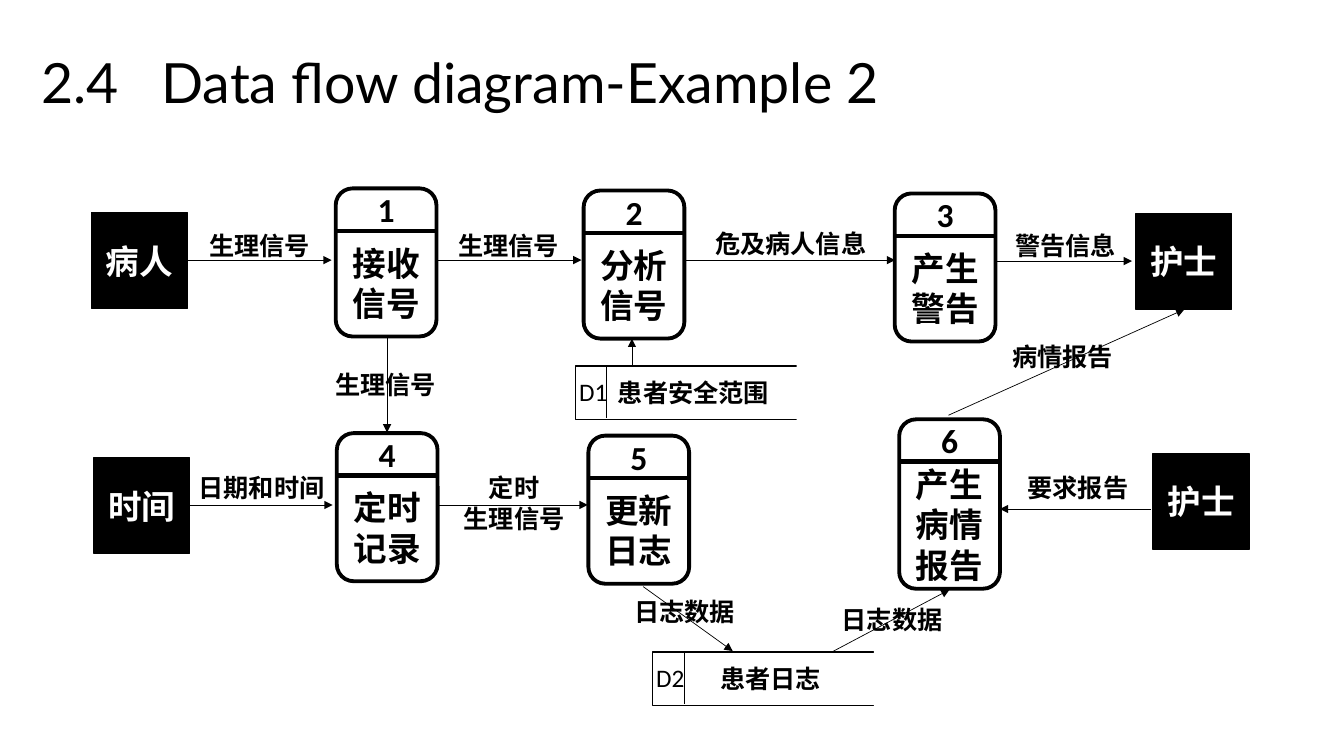
import pptx
import pptx.util
from pptx.dml.color import RGBColor
from pptx.enum.shapes import MSO_CONNECTOR, MSO_SHAPE
from pptx.enum.text import MSO_ANCHOR, PP_ALIGN
from lxml import etree

Pt = pptx.util.Pt
COLORS = {"ink": "000000", "paper": "FFFFFF"}
DRAWING = "{http://schemas.openxmlformats.org/drawingml/2006/main}"


def place(shapes, kind, box, text="", size=18, font="Calibri", color="ink",
          bold=True, fill=None, line=None):
    """Add a preset shape, or a text box when kind is None, with centred text."""
    box = [Pt(length) for length in box]
    if kind is None:
        shape = shapes.add_textbox(*box)
    else:
        shape = shapes.add_shape(kind, *box)
        shape.shadow.inherit = False
        if fill:
            shape.fill.solid()
            shape.fill.fore_color.rgb = RGBColor.from_string(COLORS[fill])
        else:
            shape.fill.background()
        if line:
            shape.line.color.rgb = RGBColor.from_string(COLORS["ink"])
            shape.line.width = Pt(line)
        else:
            shape.line.fill.background()
    frame = shape.text_frame
    frame.word_wrap = kind is not None
    frame.vertical_anchor = MSO_ANCHOR.TOP if kind is None else MSO_ANCHOR.MIDDLE
    frame.text = text
    for para in frame.paragraphs:
        para.alignment = PP_ALIGN.CENTER
        for span in para.runs:
            span.font.size = Pt(size)
            span.font.bold = bold
            span.font.name = font
            span.font.color.rgb = RGBColor.from_string(COLORS[color])
            latin = span.font._element.find(DRAWING + "latin")
            east_asian = etree.Element(DRAWING + "ea", typeface="Noto Sans CJK SC")
            latin.addnext(east_asian)
    return shape


def connect(shapes, start, end, width=0.5, arrow=False):
    connector = shapes.add_connector(
        MSO_CONNECTOR.STRAIGHT, *[Pt(value) for value in (*start, *end)])
    connector.line.width = Pt(width)
    connector.line.color.rgb = RGBColor.from_string(COLORS["ink"])
    if arrow:
        etree.SubElement(connector.line._get_or_add_ln(), DRAWING + "tailEnd",
                         type="triangle")
    etree.SubElement(connector._element.spPr, DRAWING + "effectLst")


deck = pptx.Presentation()
deck.slide_width, deck.slide_height = Pt(960), Pt(540)
page = deck.slides.add_slide(deck.slide_layouts[6])

# Title, with a tab stop between number and heading
title = place(page.shapes, None, (22.3, 31, 713.5, 54),
              "2.4\tData flow diagram-Example 2", 39.6, "Lato", bold=False)
title.text_frame.word_wrap = True
title.text_frame.vertical_anchor = MSO_ANCHOR.MIDDLE
title_para = title.text_frame.paragraphs[0]
title_para.alignment = PP_ALIGN.LEFT
tabs = etree.SubElement(title_para._p.get_or_add_pPr(), DRAWING + "tabLst")
etree.SubElement(tabs, DRAWING + "tab", pos=str(Pt(86)), algn="l")

# External entities
for name, left, top in [("病人", 65.5, 151.9), ("护士", 811.4, 152.6),
                        ("时间", 67, 326.9), ("护士", 823.7, 324)]:
    place(page.shapes, MSO_SHAPE.RECTANGLE, (left, top, 68.4, 68.4), name, 24,
          "Noto Sans CJK SC", "paper", fill="ink", line=1)

# Numbered processes
processes = [
    ("接收信号", 239.8, 134.6, 105.8), ("分析信号", 416.9, 136.1, 105.8),
    ("产生警告", 639.1, 138.2, 105.8), ("定时记录", 240.6, 309.4, 105.8),
    ("更新日志", 420.3, 311.2, 105.8), ("产生病情报告", 642.3, 299.5, 121),
]
for number, (name, left, top, height) in enumerate(processes, 1):
    group = page.shapes.add_group_shape().shapes
    process = place(group, MSO_SHAPE.ROUNDED_RECTANGLE, (left, top, 72, height),
                    name, 24, "Times New Roman", line=2.75)
    process.adjustments[0] = 0.167
    frame = process.text_frame
    frame.margin_left = frame.margin_right = frame.margin_bottom = 0
    frame.margin_top = Pt(29)
    connect(group, (left, top + 30.2), (left + 72, top + 30.2), 3)
    place(group, None, (left + 22.7, top - 2.9, 26.6, 36), str(number), 24)

# Data stores, open on the right
for code, name, left, top in [("D1", "患者安全范围", 411.1, 261.4),
                              ("D2", "患者日志", 466.2, 465.8)]:
    group = page.shapes.add_group_shape().shapes
    place(group, MSO_SHAPE.RECTANGLE, (left, top, 168.5, 38.2), name,
          fill="paper", line=1)
    connect(group, (left + 22.3, top + 0.7), (left + 22.3, top + 37.4))
    place(group, MSO_SHAPE.RECTANGLE, (left + 158, top - 4, 26.6, 46.8), fill="paper")
    place(group, None, (left - 5, top + 4, 35.3, 28.8), code, bold=False)

# Data flows
flows = [
    ((133.9, 185.8), (236.9, 185.8)), ((313.2, 185.8), (415.4, 185.8)),
    ((488.9, 185.8), (639.4, 185.8)), ((710.6, 186.5), (808.6, 186.5)),
    ((135.4, 360.7), (237.6, 360.7)), ((311.8, 360.7), (419.8, 360.7)),
    ((276.5, 240.5), (276.5, 308.9)), ((451.4, 261.4), (451.4, 241.9)),
    ((459.4, 419), (523.4, 465.1)), ((595.4, 465.1), (678.2, 421.2)),
    ((822.2, 363.6), (714.2, 363.6)), ((677.5, 296.6), (846, 221)),
]
for start, end in flows:
    connect(page.shapes, start, end, arrow=True)

# Flow labels: text, centre, top
labels = [
    ("生理信号", 185.4, 161.3), ("生理信号", 363.2, 161.3),
    ("危及病人信息", 564.8, 159.8), ("警告信息", 761, 161.3),
    ("日期和时间", 186.8, 334.1), ("生理信号", 275.4, 259.9),
    ("定时\n生理信号", 367.2, 334.1), ("日志数据", 488.9, 422.6),
    ("日志数据", 637.2, 428.4), ("要求报告", 770, 334.1),
    ("病情报告", 758.9, 240.5),
]
for text, center, top in labels:
    lines = text.split("\n")
    width = 18 * max(map(len, lines)) + 15
    place(page.shapes, None,
          (center - width / 2, top, width, 22 * len(lines) + 7), text)

deck.save("out.pptx")
